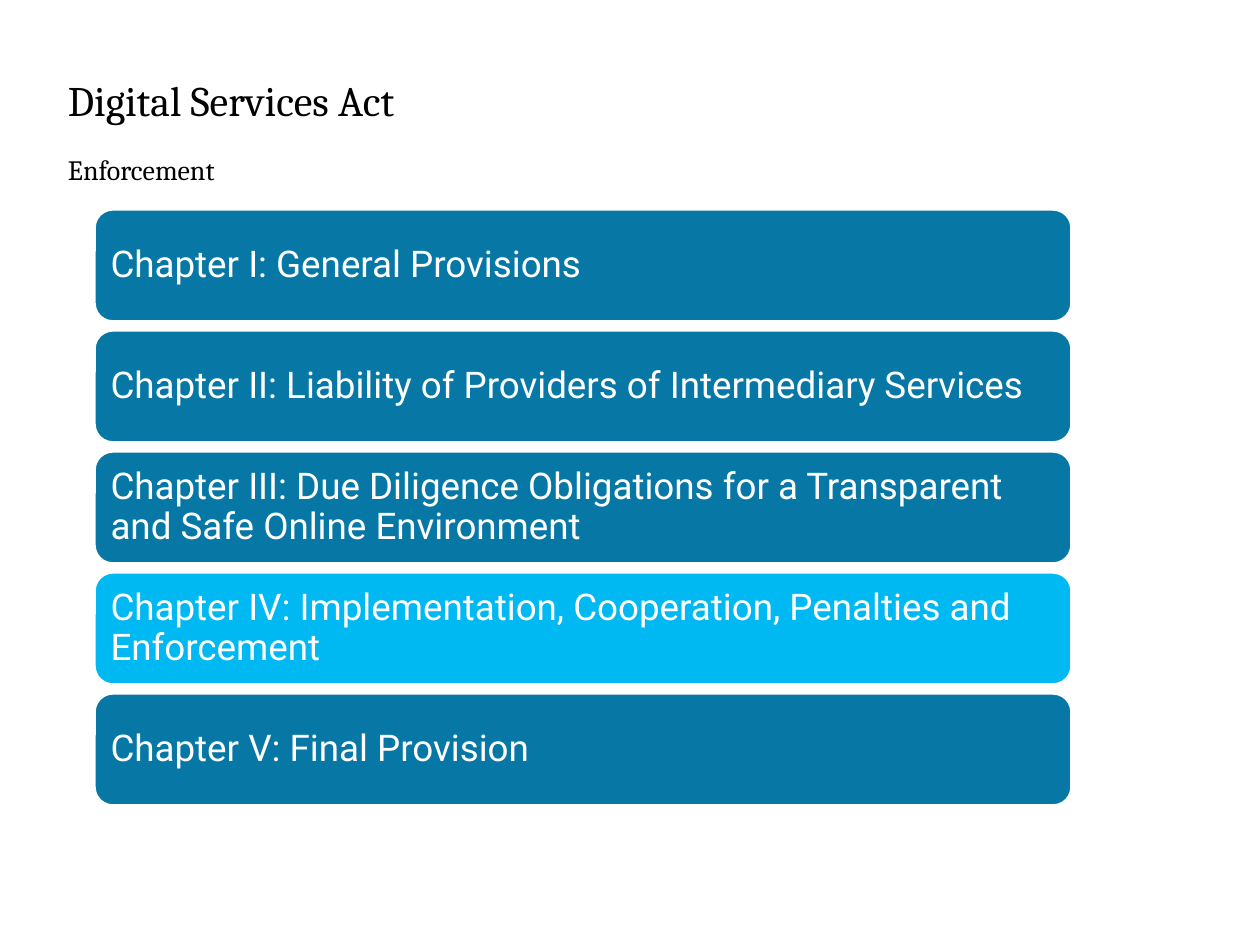
import pptx
import pptx.util
import pptx.dml.color
import pptx.enum.shapes
import pptx.enum.text


def px(n):
    return pptx.util.Emu(round(n * 914400 / 126))


def add_text(p, text, size, font, color):
    r = p.add_run()
    r.text = text
    r.font.size = pptx.util.Pt(size)
    r.font.name = font
    r.font.color.rgb = rgb(color)


rgb = pptx.dml.color.RGBColor.from_string
prs = pptx.Presentation()
prs.slide_width, prs.slide_height = px(1260), px(945)
s = prs.slides.add_slide(prs.slide_layouts[6])

tf = s.shapes.add_textbox(px(68), px(64), px(771), px(131)).text_frame
tf.word_wrap = True
tf.margin_left = tf.margin_right = tf.margin_top = tf.margin_bottom = 0
p = tf.paragraphs[0]
p.line_spacing = pptx.util.Pt(35)
add_text(p, "Digital Services Act", size=24, font="Cambria", color="000000")
p.add_line_break()
add_text(p, "Enforcement", size=16, font="Cambria", color="000000")

chapters = [
    ("Chapter I: General Provisions", "0778A5"),
    ("Chapter II: Liability of Providers of Intermediary Services", "0778A5"),
    ("Chapter III: Due Diligence Obligations for a Transparent and Safe Online Environment", "0778A5"),
    ("Chapter IV: Implementation, Cooperation, Penalties and Enforcement", "00B8F2"),
    ("Chapter V: Final Provision", "0778A5"),
]
for i, (text, fill) in enumerate(chapters):
    sp = s.shapes.add_shape(pptx.enum.shapes.MSO_SHAPE.ROUNDED_RECTANGLE,
                            px(94), px(209 + 121 * i), px(978), px(113))
    sp.shadow.inherit = False
    sp.fill.solid()
    sp.fill.fore_color.rgb = rgb(fill)
    sp.line.color.rgb = rgb("FFFFFF")
    sp.line.width = pptx.util.Pt(2)
    tf = sp.text_frame
    tf.word_wrap = True
    tf.vertical_anchor = pptx.enum.text.MSO_ANCHOR.MIDDLE
    tf.margin_left = tf.margin_right = tf.margin_top = tf.margin_bottom = px(11)
    p = tf.paragraphs[0]
    p.alignment = pptx.enum.text.PP_ALIGN.LEFT
    p.line_spacing = 0.9
    add_text(p, text, size=21, font="Roboto", color="FFFFFF")

prs.save("out.pptx")
